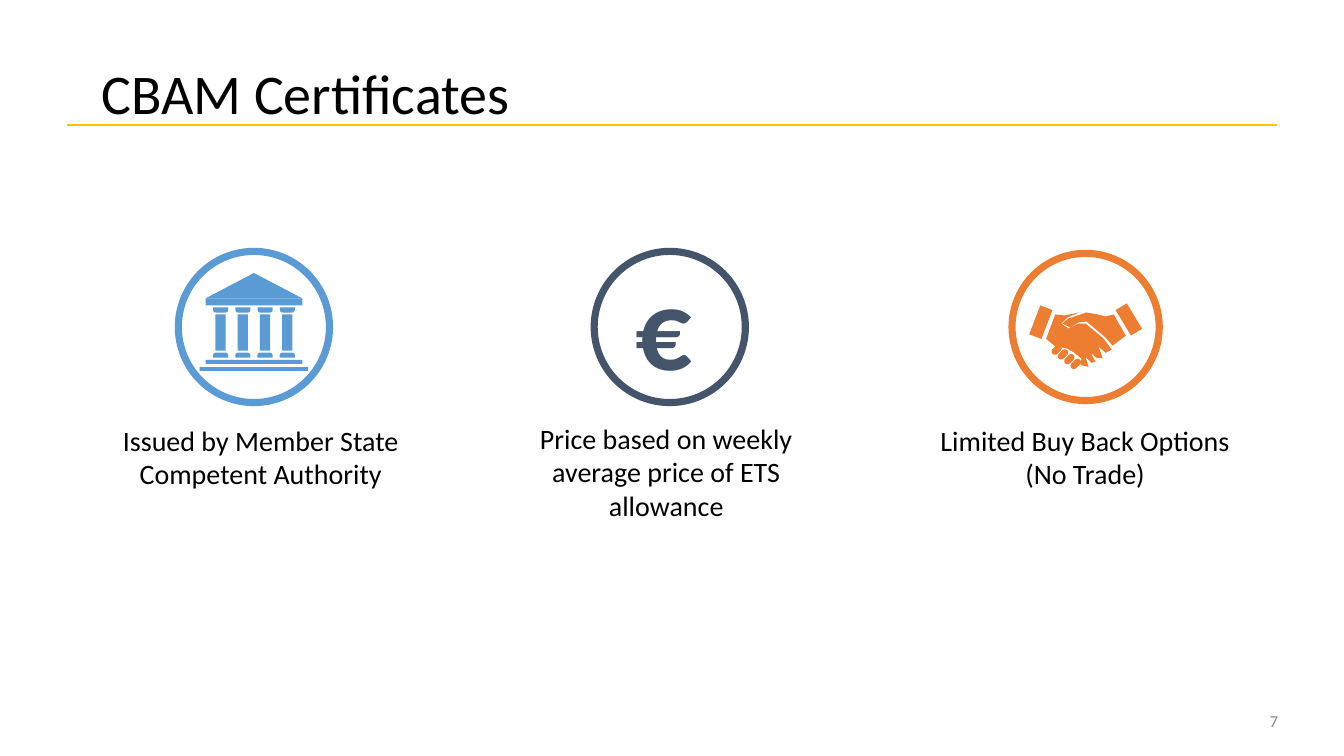
from lxml import etree
from pptx import Presentation
from pptx.dml.color import RGBColor
from pptx.enum.shapes import MSO_CONNECTOR, MSO_SHAPE
from pptx.enum.text import MSO_ANCHOR, PP_ALIGN
from pptx.oxml.ns import qn
from pptx.util import Cm, Pt

RECTANGLE = MSO_SHAPE.RECTANGLE
ROUNDED = MSO_SHAPE.ROUNDED_RECTANGLE
ROUND_TOP = MSO_SHAPE.ROUND_2_SAME_RECTANGLE
TRIANGLE = MSO_SHAPE.ISOSCELES_TRIANGLE
DONUT = MSO_SHAPE.DONUT
STRAIGHT = MSO_CONNECTOR.STRAIGHT
TOP, MIDDLE = MSO_ANCHOR.TOP, MSO_ANCHOR.MIDDLE
LEFT, CENTER, RIGHT = PP_ALIGN.LEFT, PP_ALIGN.CENTER, PP_ALIGN.RIGHT

BLACK, GREY, GOLD = "000000", "8C8C8C", "FFC000"
BLUE, NAVY, ORANGE = "5B9BD5", "44546A", "ED7D31"
GRID = Cm(2.54) / 100

FRONT_HAND = [
    (1083, 360), (1087, 359), (1082, 350), (1088, 355), (1094, 355), (1090, 344),
    (1097, 350), (1103, 347), (1095, 336), (1077, 321), (1070, 321), (1060, 326),
    (1053, 321), (1059, 315), (1071, 310), (1056, 313), (1047, 312), (1038, 336),
    (1046, 343), (1059, 346), (1066, 350), (1073, 356), (1072, 362), (1080, 364),
    (1077, 354)]
BACK_HAND = [
    (1089, 312), (1078, 310), (1060, 316), (1054, 321), (1062, 325), (1070, 320),
    (1078, 319), (1096, 334), (1104, 343), (1117, 333), (1105, 312), (1097, 314)]


def color(value):
    return RGBColor.from_string(value)


class Page:
    font = "Calibri"

    def __init__(self, deck):
        self.slide = deck.slides.add_slide(deck.slide_layouts[6])
        self.shapes = self.slide.shapes

    def paint(self, shape, fill):
        shape.shadow.inherit = False
        shape.fill.solid()
        shape.fill.fore_color.rgb = color(fill)
        shape.line.fill.background()
        return shape

    def shape(self, kind, center_x, center_y, width, height, fill, turn=0, adjust=None):
        shape = self.shapes.add_shape(
            kind, Cm(center_x - width / 2), Cm(center_y - height / 2),
            Cm(width), Cm(height))
        shape.rotation = turn
        if adjust is not None:
            shape.adjustments[0] = adjust
        self.paint(shape, fill)

    def outline(self, points, fill):
        builder = self.shapes.build_freeform(*points[0], scale=GRID)
        builder.add_line_segments(points[1:], close=True)
        self.paint(builder.convert_to_shape(), fill)

    def rule(self, left, right, top, fill):
        rule = self.shapes.add_connector(STRAIGHT, Cm(left), Cm(top), Cm(right), Cm(top))
        rule.line.color.rgb = color(fill)
        rule.line.width = Pt(1)
        etree.SubElement(rule._element.spPr, qn("a:effectLst"))

    def text(self, words, left, top, width, height, size, fill=BLACK,
             align=LEFT, anchor=TOP, bold=False, spacing=1.0):
        box = self.shapes.add_textbox(Cm(left), Cm(top), Cm(width), Cm(height))
        frame = box.text_frame
        frame.word_wrap = True
        frame.vertical_anchor = anchor
        para = frame.paragraphs[0]
        para.alignment = align
        para.line_spacing = spacing
        span = para.add_run()
        span.text = words
        span.font.name = self.font
        span.font.size = Pt(size)
        span.font.bold = bold
        span.font.color.rgb = color(fill)

    def bank(self, center):
        self.shape(TRIANGLE, center, 7.2, 2.44, 0.64, BLUE)
        self.shape(RECTANGLE, center, 7.61, 2.44, 0.18, BLUE)
        for column in range(4):
            middle = center + 0.56 * (column - 1.5)
            self.shape(ROUND_TOP, middle, 7.81, 0.38, 0.13, BLUE, 180, 0.5)
            self.shape(RECTANGLE, middle, 8.38, 0.26, 0.91, BLUE)
            self.shape(ROUND_TOP, middle, 8.95, 0.38, 0.13, BLUE, 0, 0.5)
        for step, width in enumerate((2.44, 2.74)):
            self.shape(RECTANGLE, center, 9.12 + 0.18 * step, width, 0.1, BLUE)

    def handshake(self):
        self.outline(FRONT_HAND, ORANGE)
        self.outline(BACK_HAND, ORANGE)
        for finger in range(4):
            self.shape(ROUNDED, 26.63 + 0.16 * finger, 8.81 + 0.12 * finger,
                       0.3, 0.17, ORANGE, -45, 0.5)
        self.shape(RECTANGLE, 26.23, 8.12, 0.33, 0.78, ORANGE, 21)
        self.shape(RECTANGLE, 28.45, 8.05, 0.33, 0.75, ORANGE, -31)


def main():
    deck = Presentation()
    deck.slide_width, deck.slide_height = Cm(33.87), Cm(19.05)
    page = Page(deck)
    page.rule(1.7, 32.18, 3.15, GOLD)
    page.text("CBAM Certificates", 2.31, 0.58, 29.21, 3.68, 40,
              anchor=MIDDLE, spacing=0.9)

    topics = [
        (BLUE, 3.99, "Issued by Member State Competent Authority", 2.62, 10.54, 7.9),
        (NAVY, 3.99, "Price based on weekly average price of ETS allowance",
         13.26, 10.49, 7.06),
        (ORANGE, 3.89, "Limited Buy Back Options (No Trade)", 23.42, 10.54, 7.85),
    ]
    for index, (fill, diameter, caption, left, top, width) in enumerate(topics):
        page.shape(DONUT, 6.4 + 10.48 * index, 8.24, diameter, diameter, fill,
                   adjust=0.18 / diameter)
        page.text(caption, left, top, width, 2.82, 20, align=CENTER)

    page.bank(6.4)
    page.text("€", 15.77, 6.4, 2.29, 3.68, 80, NAVY, bold=True)
    page.handshake()
    page.text("7", 24.56, 17.65, 7.9, 1.02, 12, GREY, RIGHT, MIDDLE)
    deck.save("out.pptx")


if __name__ == "__main__":
    main()
